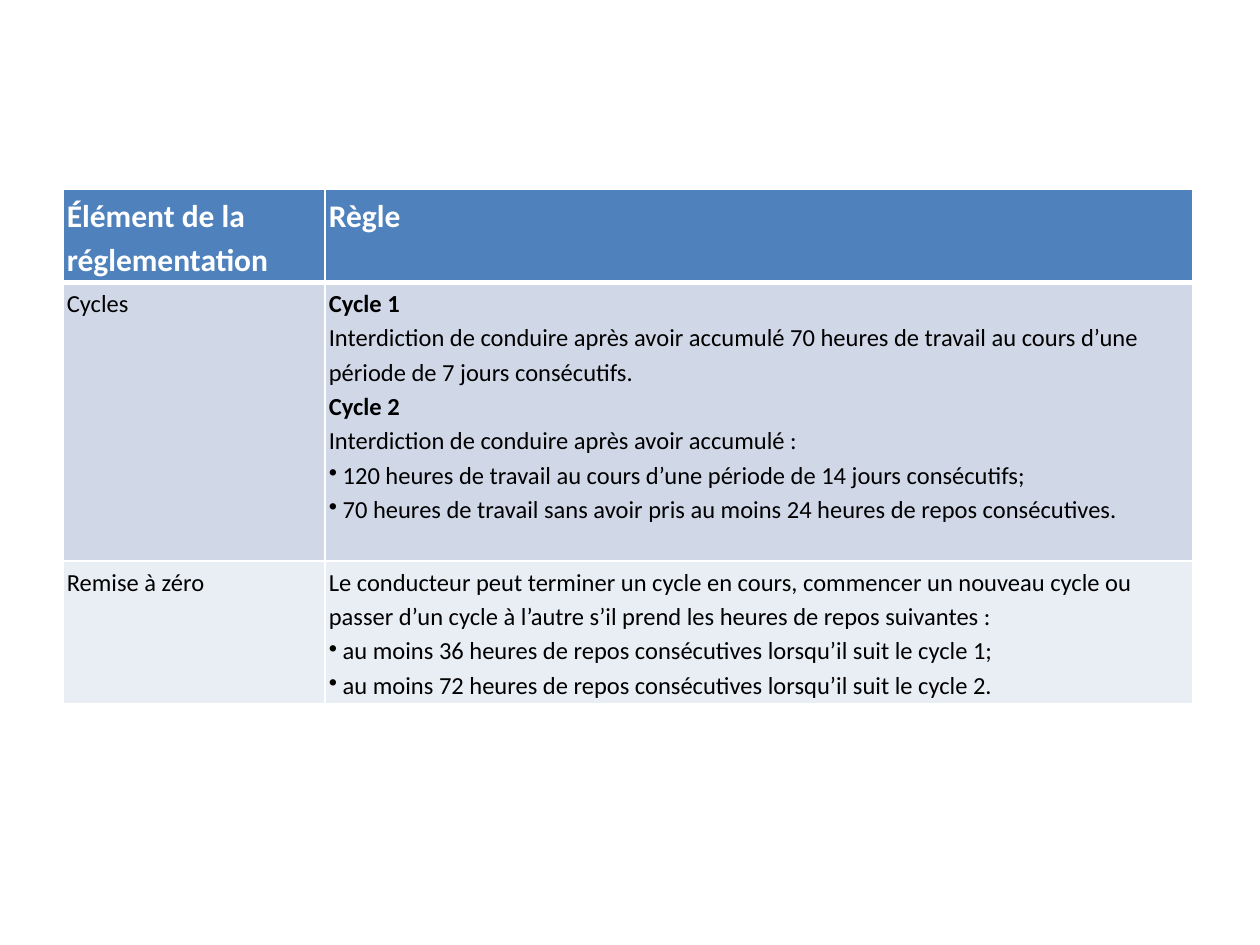
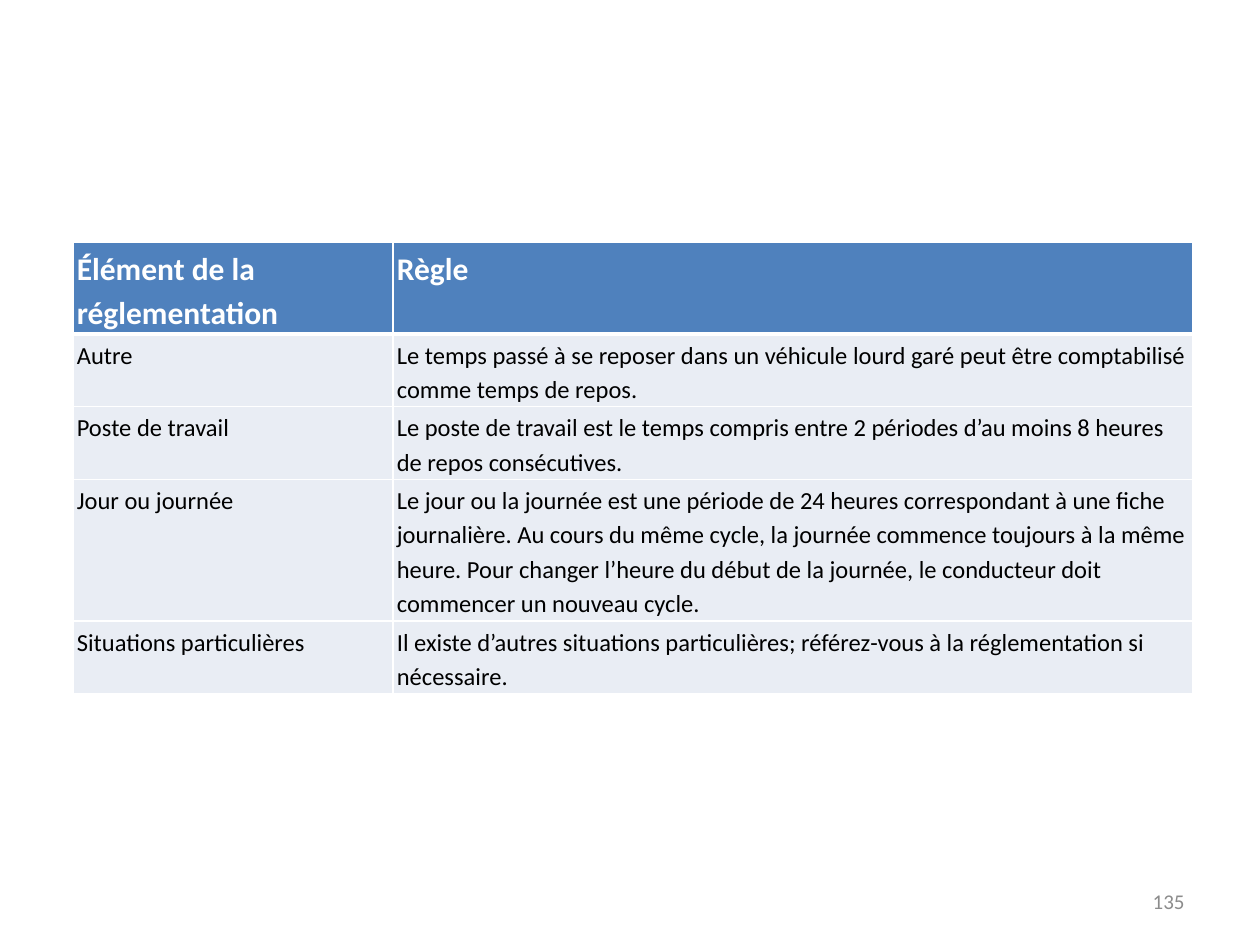
"""Build two slides of driving-hour rules."""
from dataclasses import dataclass

from lxml import etree
from pptx import Presentation
from pptx.dml.color import RGBColor
from pptx.enum.text import MSO_ANCHOR, PP_ALIGN
from pptx.oxml.ns import qn
from pptx.util import Inches, Pt

RIGHT = PP_ALIGN.RIGHT
MID = MSO_ANCHOR.MIDDLE
HEAD = ("Élément de la réglementation", "Règle")


@dataclass(frozen=True)
class Theme:
    """Colours, type sizes and gaps."""
    font: str = "Calibri"
    white: str = "FFFFFF"
    black: str = "000000"
    blue: str = "4F81BD"
    mist: str = "D0D8E8"
    pale: str = "E9EDF4"
    grey: str = "8C8C8C"
    big: int = 18
    body: int = 14
    small: int = 12
    lead: float = 1.15
    padx: float = 0.03
    pady: float = 0.02
    dent: float = 0.11
    thin: int = 1
    thick: int = 3


class Deck:
    """Hold the style and the current slide."""

    def __init__(self, theme):
        """Start a blank 4:3 deck."""
        self.theme = theme
        self.prs = Presentation()
        self.prs.slide_width, self.prs.slide_height = Inches(10), Inches(7.5)
        self.slide = None

    def page(self):
        """Add a slide on a white ground."""
        self.slide = self.prs.slides.add_slide(self.prs.slide_layouts[6])
        fill = self.slide.background.fill
        fill.solid()
        fill.fore_color.rgb = RGBColor.from_string(self.theme.white)

    def wide(self, share):
        """Turn a share of the width into a length."""
        return round(self.prs.slide_width * share)

    def high(self, share):
        """Turn a share of the height into a length."""
        return round(self.prs.slide_height * share)

    def style(self, para, size, color, bold=False):
        """Set the type of a paragraph."""
        form = {"name": self.theme.font, "size": Pt(size), "bold": bold}
        for key, val in form.items():
            setattr(para.font, key, val)
        para.font.color.rgb = RGBColor.from_string(color)

    def bullet(self, para):
        """Give a paragraph a round bullet."""
        prop = para._p.get_or_add_pPr()
        dent = Inches(self.theme.dent)
        prop.set("marL", str(dent))
        prop.set("indent", str(-dent))
        etree.SubElement(prop, qn("a:buChar"), char="•")

    def edges(self, cell, top, low):
        """Draw the white borders of a cell."""
        prop = cell._tc.get_or_add_tcPr()
        thin = self.theme.thin
        sides = {"L": thin, "R": thin, "T": top, "B": low}
        for spot, (side, size) in enumerate(sides.items()):
            line = etree.Element(qn(f"a:ln{side}"), w=str(Pt(size)))
            fill = etree.SubElement(line, qn("a:solidFill"))
            etree.SubElement(fill, qn("a:srgbClr"), val=self.theme.white)
            prop.insert(spot, line)

    def words(self, cell, text, size, color, bold):
        """Fill a cell; a line opens with * for bold or • for a bullet."""
        frame = cell.text_frame
        for num, line in enumerate(text.split("\n")):
            para = frame.add_paragraph() if num else frame.paragraphs[0]
            para.line_spacing = self.theme.lead
            if line.startswith("•"):
                self.bullet(para)
            para.add_run().text = line.lstrip("*•")
            self.style(para, size, color, bold or line.startswith("*"))

    def table(self, left, top, cols, rows, body, fills):
        """Add a rule table with a slim blank column at its end."""
        th = self.theme
        grid = self.slide.shapes.add_table(
            len(rows), len(cols), self.wide(left), self.high(top),
            self.wide(sum(cols)), self.high(sum(rows))).table
        grid.first_row = grid.horz_banding = False
        for col, share in zip(grid.columns, cols):
            col.width = self.wide(share)
        for row, share in zip(grid.rows, rows):
            row.height = self.high(share)
        pad = {"margin_left": th.padx, "margin_right": th.padx,
               "margin_top": th.pady, "margin_bottom": th.pady}
        for r, (texts, tint) in enumerate(zip([HEAD, *body], [th.blue, *fills])):
            size, color = (th.body, th.black) if r else (th.big, th.white)
            for c in range(len(cols)):
                cell = grid.cell(r, c)
                for key, val in pad.items():
                    setattr(cell, key, Inches(val))
                full = c < len(texts)
                cell.fill.solid()
                cell.fill.fore_color.rgb = RGBColor.from_string(
                    tint if full else th.white)
                self.edges(cell, th.thick if r == 1 else th.thin,
                           th.thin if r else th.thick)
                if full:
                    self.words(cell, texts[c], size, color, r == 0)

    def number(self, text):
        """Add the page number at the lower right."""
        box = self.slide.shapes.add_textbox(
            self.wide(0.717), self.high(0.927), self.wide(0.233), self.high(0.053))
        frame = box.text_frame
        for key, val in {"word_wrap": True, "vertical_anchor": MID}.items():
            setattr(frame, key, val)
        para = frame.paragraphs[0]
        para.alignment = RIGHT
        para.add_run().text = text
        self.style(para, self.theme.small, self.theme.grey)


CYCLES = [
    ("Cycles",
     "*Cycle 1\n"
     "Interdiction de conduire après avoir accumulé 70 heures de travail "
     "au cours d’une période de 7 jours consécutifs.\n"
     "*Cycle 2\n"
     "Interdiction de conduire après avoir accumulé :\n"
     "•120 heures de travail au cours d’une période de 14 jours consécutifs;\n"
     "•70 heures de travail sans avoir pris au moins 24 heures de repos "
     "consécutives."),
    ("Remise à zéro",
     "Le conducteur peut terminer un cycle en cours, commencer un nouveau "
     "cycle ou passer d’un cycle à l’autre s’il prend les heures de repos "
     "suivantes :\n"
     "•au moins 36 heures de repos consécutives lorsqu’il suit le cycle 1;\n"
     "•au moins 72 heures de repos consécutives lorsqu’il suit le cycle 2."),
]
OTHERS = [
    ("Autre",
     "Le temps passé à se reposer dans un véhicule lourd garé peut être "
     "comptabilisé comme temps de repos."),
    ("Poste de travail",
     "Le poste de travail est le temps compris entre 2 périodes d’au moins "
     "8 heures de repos consécutives."),
    ("Jour ou journée",
     "Le jour ou la journée est une période de 24 heures correspondant à une "
     "fiche journalière. Au cours du même cycle, la journée commence toujours "
     "à la même heure. Pour changer l’heure du début de la journée, le "
     "conducteur doit commencer un nouveau cycle."),
    ("Situations particulières",
     "Il existe d’autres situations particulières; référez-vous à la "
     "réglementation si nécessaire."),
]


def main():
    """Build and save the deck."""
    theme = Theme()
    deck = Deck(theme)
    deck.page()
    deck.table(0.05, 0.2, (0.208, 0.689, 0.003), (0.097, 0.295, 0.149),
               CYCLES, (theme.mist, theme.pale))
    deck.page()
    deck.number("135")
    deck.table(0.058, 0.256, (0.254, 0.635, 0.003),
               (0.097, 0.077, 0.077, 0.15, 0.077),
               OTHERS, [theme.pale] * len(OTHERS))
    deck.prs.save("out.pptx")


if __name__ == "__main__":
    main()
